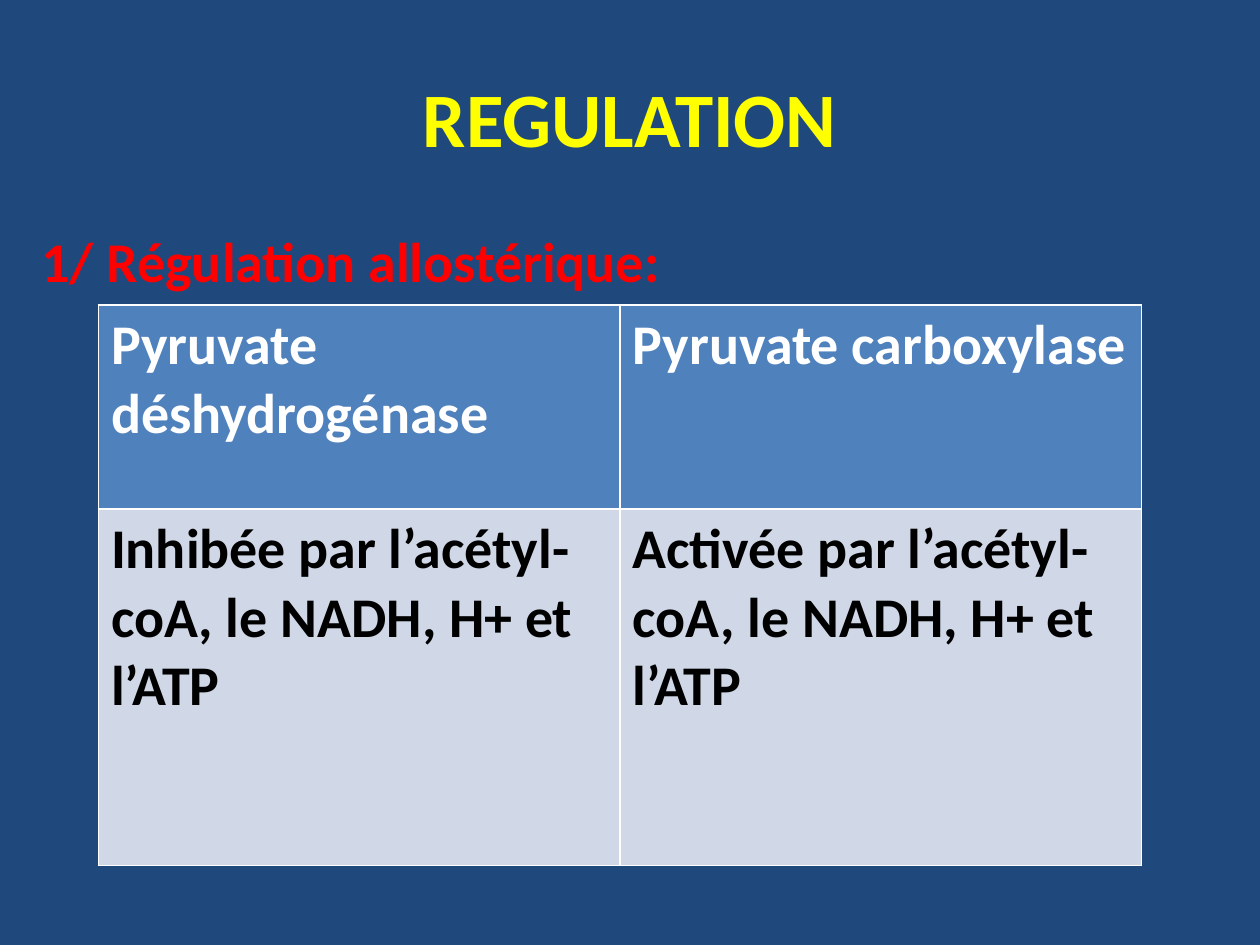
"""Build a slide on allosteric regulation with a two-column table."""
from lxml import etree
from pptx import Presentation
from pptx.dml.color import RGBColor
from pptx.enum.text import MSO_ANCHOR, PP_ALIGN
from pptx.oxml.ns import qn
from pptx.util import Pt

CENTER = PP_ALIGN.CENTER
LEFT = PP_ALIGN.LEFT
MIDDLE = MSO_ANCHOR.MIDDLE
TOP = MSO_ANCHOR.TOP

TITLE = "REGULATION"
HEADING = "1/ Régulation allostérique:"
ROWS = [
    ("Pyruvate déshydrogénase", "Pyruvate carboxylase"),
    ("Inhibée par l’acétyl-coA, le NADH, H+ et l’ATP",
     "Activée par l’acétyl-coA, le NADH, H+ et l’ATP"),
]

THEME = {
    "font": "Calibri", "title_size": 44, "text_size": 32,
    "back": "1F497D", "title": "FFFF00", "heading": "FF0000",
    "rows": [("4F81BD", "FFFFFF"), ("D0D8E8", "000000")],
}

SIZE = (720, 540)
TITLE_BOX = (36, 21.6, 648, 90)
BODY_BOX = (16.5, 126, 686.25, 356.4)
TABLE_BOX = (56.25, 174.25, 596.2, 320.4)
HEIGHTS = (116.6, 203.8)


def write(frame, text, size, color, align):
    frame.text = text
    para = frame.paragraphs[0]
    para.alignment = align
    font = para.runs[0].font
    font.name = THEME["font"]
    font.size = Pt(size)
    font.bold = True
    font.color.rgb = RGBColor.from_string(color)
    return para


def place(shape, box):
    shape.left, shape.top, shape.width, shape.height = map(Pt, box)


def add_grid(slide):
    shape = slide.shapes.add_table(len(ROWS), len(ROWS[0]), *map(Pt, TABLE_BOX))
    grid = shape.table
    for row, height, texts, (fill, ink) in zip(grid.rows, HEIGHTS, ROWS, THEME["rows"]):
        row.height = Pt(height)
        for cell, text in zip(row.cells, texts):
            cell.fill.solid()
            cell.fill.fore_color.rgb = RGBColor.from_string(fill)
            write(cell.text_frame, text, THEME["text_size"], ink, LEFT)


def main():
    deck = Presentation()
    deck.slide_width, deck.slide_height = map(Pt, SIZE)
    slide = deck.slides.add_slide(deck.slide_layouts[1])
    back = slide.background.fill
    back.solid()
    back.fore_color.rgb = RGBColor.from_string(THEME["back"])

    title, body = slide.placeholders
    place(title, TITLE_BOX)
    title.text_frame.vertical_anchor = MIDDLE
    write(title.text_frame, TITLE, THEME["title_size"], THEME["title"], CENTER)

    place(body, BODY_BOX)
    body.text_frame.vertical_anchor = TOP
    para = write(body.text_frame, HEADING, THEME["text_size"], THEME["heading"], LEFT)
    etree.SubElement(para._p.get_or_add_pPr(), qn("a:buNone"))

    add_grid(slide)
    deck.save("out.pptx")


if __name__ == "__main__":
    main()
